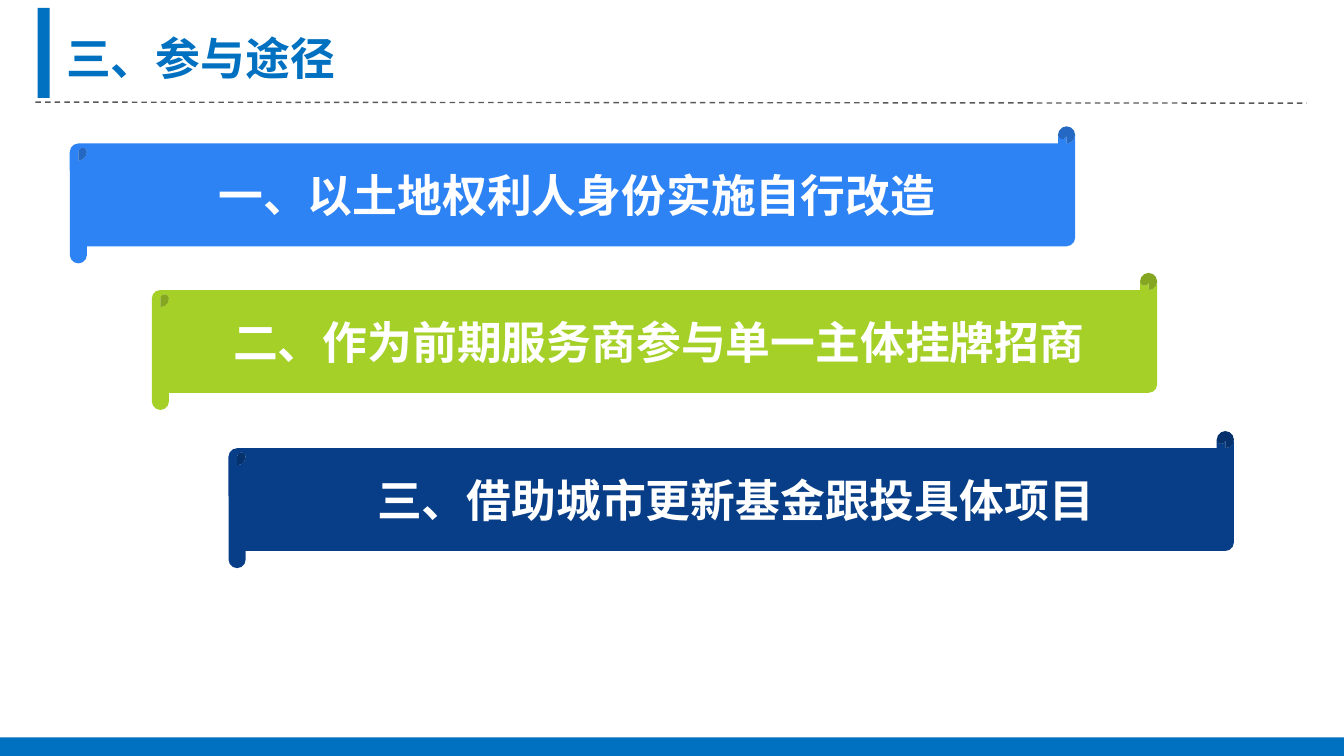
from lxml import etree
from pptx import Presentation
from pptx.dml.color import RGBColor
from pptx.enum.dml import MSO_LINE
from pptx.enum.shapes import MSO_CONNECTOR, MSO_SHAPE
from pptx.enum.text import MSO_ANCHOR, PP_ALIGN
from pptx.oxml.ns import qn
from pptx.util import Cm, Pt

RECTANGLE = MSO_SHAPE.RECTANGLE
SCROLL = MSO_SHAPE.HORIZONTAL_SCROLL
STRAIGHT = MSO_CONNECTOR.STRAIGHT
DASH = MSO_LINE.DASH
MIDDLE = MSO_ANCHOR.MIDDLE
CENTER = PP_ALIGN.CENTER

BLUE = RGBColor(0x00, 0x70, 0xC0)
GREY = RGBColor(0x59, 0x59, 0x59)
WHITE = RGBColor(0xFF, 0xFF, 0xFF)
SKY = RGBColor(0x2D, 0x82, 0xF4)
LIME = RGBColor(0xA5, 0xD0, 0x28)
NAVY = RGBColor(0x07, 0x3E, 0x87)

FONT = "Noto Sans CJK SC"
HEADING_FORMAT = {"name": FONT, "size": Pt(24), "bold": True}
PAGE_WIDTH, PAGE_HEIGHT = 25.4, 14.29
SCROLL_WIDTH, SCROLL_HEIGHT = 19, 2.59
ROUTES = [
    ("一、以土地权利人身份实施自行改造", SKY, 1.32, 2.39),
    ("二、作为前期服务商参与单一主体挂牌招商", LIME, 2.87, 5.16),
    ("三、借助城市更新基金跟投具体项目", NAVY, 4.32, 8.15),
]


def add_block(page, kind, box, color):
    """Add a flat shape in one colour; box is left, top, width, height in cm."""
    shape = page.shapes.add_shape(kind, *map(Cm, box))
    shape.shadow.inherit = False
    shape.fill.solid()
    shape.fill.fore_color.rgb = color
    shape.line.fill.background()
    return shape


def write_heading(frame, text, color):
    """Write one bold heading into a text frame."""
    frame.word_wrap = True
    para = frame.paragraphs[0]
    span = para.add_run()
    span.text = text
    for name, value in HEADING_FORMAT.items():
        setattr(span.font, name, value)
    span.font.color.rgb = color
    latin = span.font._element.find(qn("a:latin"))
    east_asian = etree.Element(qn("a:ea"), typeface=FONT)
    latin.addnext(east_asian)
    return para


def add_header(page, box, title):
    """Place the accent bar, title and dashed rule in the box."""
    left, top, width, height = box
    add_block(page, RECTANGLE, (left + 0.04, top, 0.23, 1.7), BLUE)
    rule_top = top + height
    rule = page.shapes.add_connector(
        STRAIGHT, Cm(left), Cm(rule_top), Cm(left + width), Cm(rule_top + 0.02))
    rule.line.color.rgb = GREY
    rule.line.width = Pt(0.75)
    rule.line.dash_style = DASH
    etree.SubElement(rule._element.spPr, qn("a:effectLst"))
    label = page.shapes.add_textbox(
        Cm(left + 0.33), Cm(top + 0.31), Cm(16.2), Cm(1.27))
    write_heading(label.text_frame, title, BLUE)


def add_route(page, box, text, color):
    """Place one scroll banner with its centred heading in the box."""
    banner = add_block(page, SCROLL, box, color)
    banner.text_frame.vertical_anchor = MIDDLE
    write_heading(banner.text_frame, text, WHITE).alignment = CENTER


def add_footer(page, box):
    """Fill the box with the footer band."""
    add_block(page, RECTANGLE, box, BLUE)


def main():
    """Build the deck and save it."""
    deck = Presentation()
    deck.slide_width, deck.slide_height = Cm(PAGE_WIDTH), Cm(PAGE_HEIGHT)
    page = deck.slides.add_slide(deck.slide_layouts[6])
    add_header(page, (0.67, 0.15, 24.03, 1.78), "三、参与途径")
    add_footer(page, (0, PAGE_HEIGHT - 0.35, PAGE_WIDTH, 0.35))
    for text, color, left, top in ROUTES:
        add_route(page, (left, top, SCROLL_WIDTH, SCROLL_HEIGHT), text, color)
    deck.save("out.pptx")


if __name__ == "__main__":
    main()
